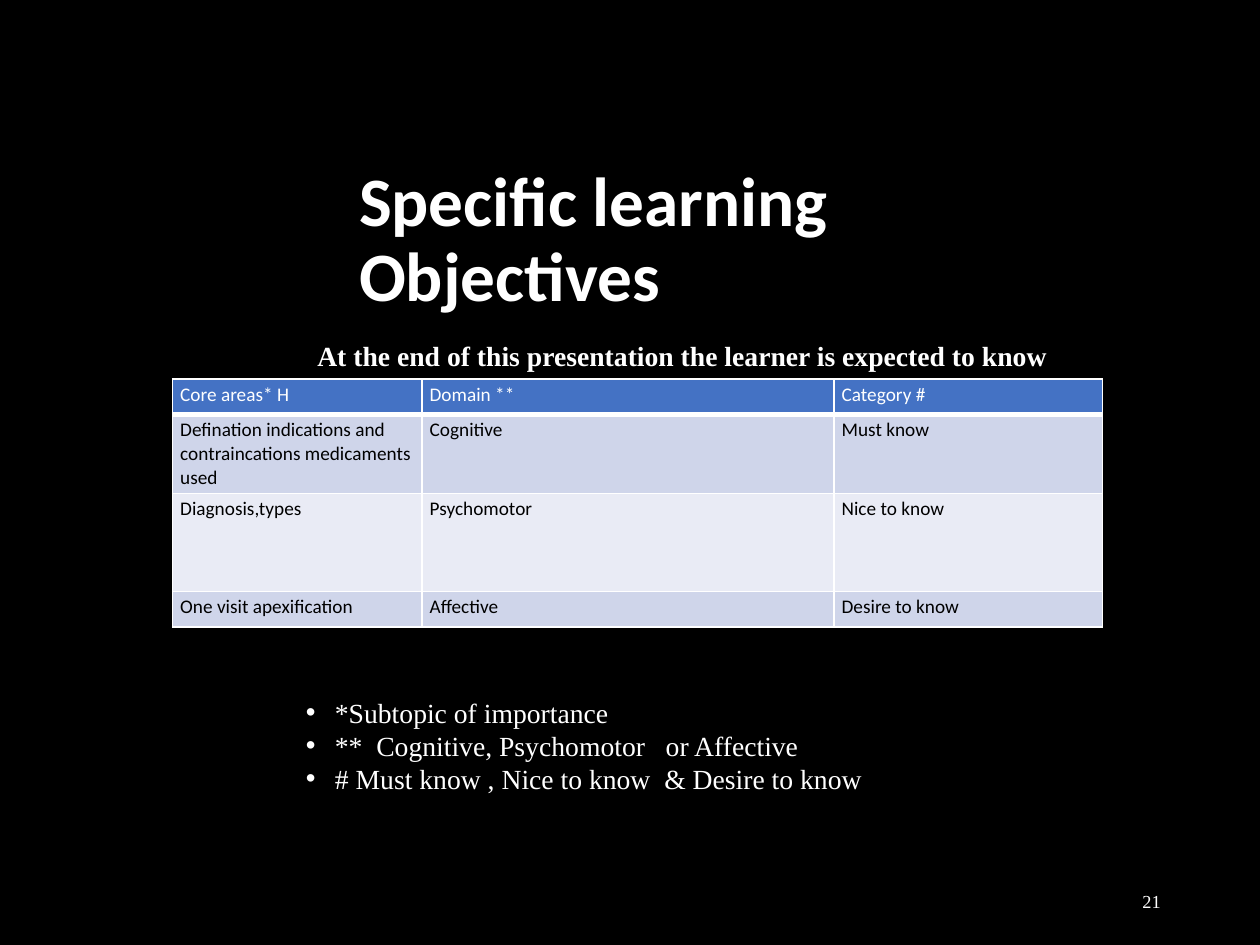
from dataclasses import dataclass

from lxml import etree
from pptx import Presentation
from pptx.dml.color import RGBColor
from pptx.enum.text import MSO_ANCHOR, MSO_AUTO_SIZE, PP_ALIGN
from pptx.oxml.ns import qn
from pptx.util import Inches, Pt

LEFT, RIGHT = PP_ALIGN.LEFT, PP_ALIGN.RIGHT
TOP, MIDDLE = MSO_ANCHOR.TOP, MSO_ANCHOR.MIDDLE
NO_FIT = MSO_AUTO_SIZE.NONE

SANS, SERIF = "Calibri", "Times New Roman"
WHITE, BLACK = "FFFFFF", "000000"
HEADER_FILL, BAND_FILLS = "4472C4", ("CFD5EA", "E9EBF5")

COL_WIDTHS = (1.98, 3.27, 2.13)
ROW_HEIGHTS = (0.28, 0.6, 0.78, 0.28)
ROWS = (
    ("Core areas* H", "Domain **", "Category #"),
    ("Defination indications and contraincations medicaments used",
     "Cognitive", "Must know"),
    ("Diagnosis,types", "Psychomotor", "Nice to know"),
    ("One visit apexification", "Affective", "Desire to know"),
)


@dataclass
class TextBox:
    box: tuple[float, float, float, float]
    lines: tuple[str, ...]
    size: float
    bold: bool = False
    bullets: bool = False
    align: PP_ALIGN = LEFT
    anchor: MSO_ANCHOR = TOP


TEXT_BOXES = (
    TextBox((2.33, 5.47, 5.1, 0.9),
            ("*Subtopic of importance",
             "**  Cognitive, Psychomotor   or Affective",
             "# Must know , Nice to know  & Desire to know"),
            15.8, bullets=True),
    TextBox((2.42, 2.64, 6.03, 0.37),
            ("At the end of this presentation the learner is expected to know",),
            15.8, bold=True),
    TextBox((7.06, 6.95, 2.25, 0.4), ("21",), 10.5, align=RIGHT, anchor=MIDDLE),
)


def rgb(color: str) -> RGBColor:
    return RGBColor.from_string(color)


def format_runs(p, font: str, size: float, color: str, bold: bool = False) -> None:
    for r in p.runs:
        r.font.name, r.font.size, r.font.bold = font, Pt(size), bold
        r.font.color.rgb = rgb(color)


def add_bullet(p, indent: float) -> None:
    pPr = p._p.get_or_add_pPr()
    pPr.set("marL", str(Inches(indent)))
    pPr.set("indent", str(-Inches(indent)))
    etree.SubElement(pPr, qn("a:buFont"), typeface="Arial")
    etree.SubElement(pPr, qn("a:buChar"), char="•")


def add_text(s, item: TextBox) -> None:
    sp = s.shapes.add_textbox(*map(Inches, item.box))
    tf = sp.text_frame
    tf.word_wrap = True
    tf.vertical_anchor = item.anchor
    tf.text = "\n".join(item.lines)
    for p in tf.paragraphs:
        p.alignment = item.align
        format_runs(p, SERIF, item.size, WHITE, item.bold)
        if item.bullets:
            add_bullet(p, 0.23)


def set_borders(cell, widths: dict[str, float]) -> None:
    tcPr = cell._tc.get_or_add_tcPr()
    for side, width in widths.items():
        ln = etree.SubElement(tcPr, qn(f"a:ln{side}"), w=str(Pt(width)))
        fill = etree.SubElement(ln, qn("a:solidFill"))
        etree.SubElement(fill, qn("a:srgbClr"), val=WHITE)


def style_cell(cell, text: str, row: int) -> None:
    header = row == 0
    cell.margin_left = cell.margin_right = Inches(0.06)
    cell.margin_top = cell.margin_bottom = Inches(0.03)
    # Borders come before the fill in the cell properties
    set_borders(cell, {"L": 1, "R": 1, "T": 3 if row == 1 else 1,
                       "B": 3 if header else 1})
    cell.fill.solid()
    cell.fill.fore_color.rgb = rgb(HEADER_FILL if header else BAND_FILLS[(row - 1) % 2])
    cell.text_frame.text = text
    format_runs(cell.text_frame.paragraphs[0], SANS, 11, WHITE if header else BLACK)


def add_objectives_table(s) -> None:
    table = s.shapes.add_table(
        len(ROWS), len(COL_WIDTHS), Inches(1.37), Inches(3.01),
        Inches(sum(COL_WIDTHS)), Inches(sum(ROW_HEIGHTS))).table
    for column, width in zip(table.columns, COL_WIDTHS):
        column.width = Inches(width)
    for i, (height, texts) in enumerate(zip(ROW_HEIGHTS, ROWS)):
        table.rows[i].height = Inches(height)
        for j, text in enumerate(texts):
            style_cell(table.cell(i, j), text, i)


def set_title(s, text: str) -> None:
    sp = s.shapes.title
    sp.left, sp.top, sp.width, sp.height = map(Inches, (2.75, 1.58, 5.7, 0.68))
    tf = sp.text_frame
    tf.text = text
    tf.word_wrap, tf.auto_size, tf.vertical_anchor = True, NO_FIT, MIDDLE
    p = tf.paragraphs[0]
    p.alignment, p.line_spacing = LEFT, 0.9
    format_runs(p, SANS, 39.6, WHITE, bold=True)


def main() -> None:
    prs = Presentation()
    prs.slide_width, prs.slide_height = Inches(10), Inches(7.5)
    s = prs.slides.add_slide(prs.slide_layouts[5])
    s.background.fill.solid()
    s.background.fill.fore_color.rgb = rgb(BLACK)

    # Title and table, then the notes, lead-in and page number
    set_title(s, "Specific learning Objectives")
    add_objectives_table(s)
    for item in TEXT_BOXES:
        add_text(s, item)

    prs.save("out.pptx")


if __name__ == "__main__":
    main()
